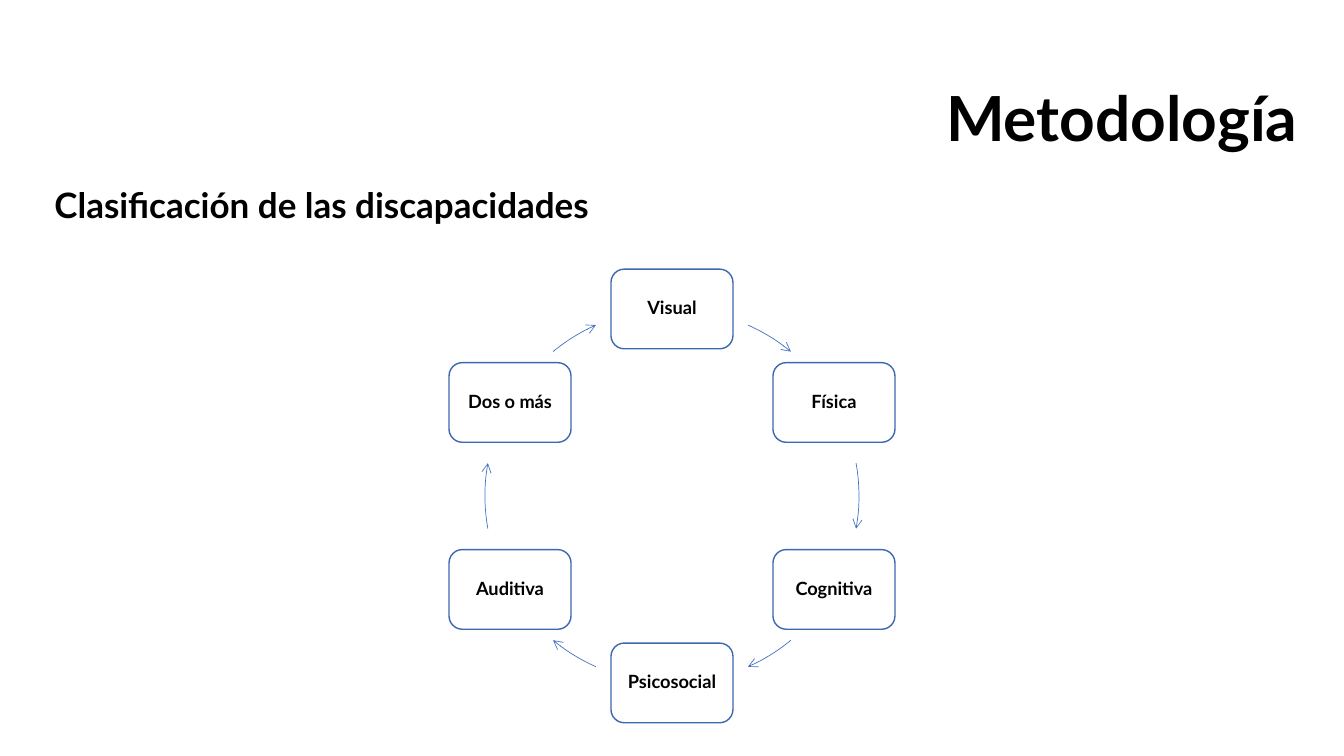
"""Build the slide that shows the kinds of disability as a ring."""
from math import cos, radians, sin

from lxml import etree
from pptx import Presentation
from pptx.dml.color import RGBColor
from pptx.enum.shapes import MSO_SHAPE
from pptx.enum.text import MSO_ANCHOR, MSO_AUTO_SIZE, PP_ALIGN
from pptx.oxml.ns import qn
from pptx.util import Inches, Pt

LEFT, MID, RIGHT = PP_ALIGN.LEFT, PP_ALIGN.CENTER, PP_ALIGN.RIGHT
TOP, MIDDLE = MSO_ANCHOR.TOP, MSO_ANCHOR.MIDDLE
NONE = MSO_AUTO_SIZE.NONE
BOX, ARC = MSO_SHAPE.ROUNDED_RECTANGLE, MSO_SHAPE.ARC

HEAD = "Metodología"
SUB = "Clasificación de las discapacidades"
KINDS = ["Visual", "Física", "Cognitiva", "Psicosocial", "Auditiva", "Dos o más"]
FONT = "Lato"
HUES = {"text": "000000", "fill": "FFFFFF", "edge": "3E67B2", "arrow": "4472C4"}

WIDE, HIGH = 13.33, 7.5
HUB_X, HUB_Y = WIDE / 2, 4.92
RING = 1.855
BOX_W, BOX_H = 1.21, 0.79
STEP = 360 / len(KINDS)
SPANS = [(24, 39.5), (79.9, 100.1), (140.5, 156)]
SPANS += [(start + 180, end + 180) for start, end in SPANS]


def hue(name):
    return RGBColor.from_string(HUES[name])


def write(shape, text, size, align, anchor, space=1.0):
    frame = shape.text_frame
    frame.text = text
    frame.word_wrap = True
    frame.auto_size = NONE
    frame.vertical_anchor = anchor
    para = frame.paragraphs[0]
    para.alignment = align
    para.line_spacing = space
    para.space_before = Pt(0)
    font = para.runs[0].font
    font.name, font.size, font.bold = FONT, Pt(size), True
    font.color.rgb = hue("text")


def place(shape, left, top, width, height):
    shape.left, shape.top = Inches(left), Inches(top)
    shape.width, shape.height = Inches(width), Inches(height)


def add(slide, kind, x, y, width, height, edge, weight):
    shape = slide.shapes.add_shape(
        kind, Inches(x - width / 2), Inches(y - height / 2),
        Inches(width), Inches(height))
    shape.shadow.inherit = False
    shape.line.color.rgb = hue(edge)
    shape.line.width = Pt(weight)
    return shape


def add_kind(slide, text, turn):
    x = HUB_X + RING * sin(radians(turn))
    y = HUB_Y - RING * cos(radians(turn))
    box = add(slide, BOX, x, y, BOX_W, BOX_H, "edge", 1)
    box.fill.solid()
    box.fill.fore_color.rgb = hue("fill")
    frame = box.text_frame
    frame.margin_left = frame.margin_right = Inches(0.05)
    frame.margin_top = frame.margin_bottom = Inches(0.05)
    write(box, text, 13, MID, MIDDLE, 0.9)


def add_arrow(slide, span):
    arc = add(slide, ARC, HUB_X, HUB_Y, 2 * RING, 2 * RING, "arrow", 0.5)
    arc.fill.background()
    for i, turn in enumerate(span):
        arc.adjustments[i] = (turn - 90) % 360 * 0.6
    etree.SubElement(arc.line._get_or_add_ln(), qn("a:tailEnd"), type="arrow")


def main():
    deck = Presentation()
    deck.slide_width, deck.slide_height = Inches(WIDE), Inches(HIGH)
    slide = deck.slides.add_slide(deck.slide_layouts[0])
    title, sub = slide.placeholders
    place(title, 5.25, 0.88, 7.72, 0.7)
    write(title, HEAD, 44.4, RIGHT, TOP, 0.8)
    place(sub, 0.44, 1.77, 6.22, 0.52)
    write(sub, SUB, 25, LEFT, TOP)
    for i, (text, span) in enumerate(zip(KINDS, SPANS)):
        add_kind(slide, text, i * STEP)
        add_arrow(slide, span)
    deck.save("out.pptx")


if __name__ == "__main__":
    main()
